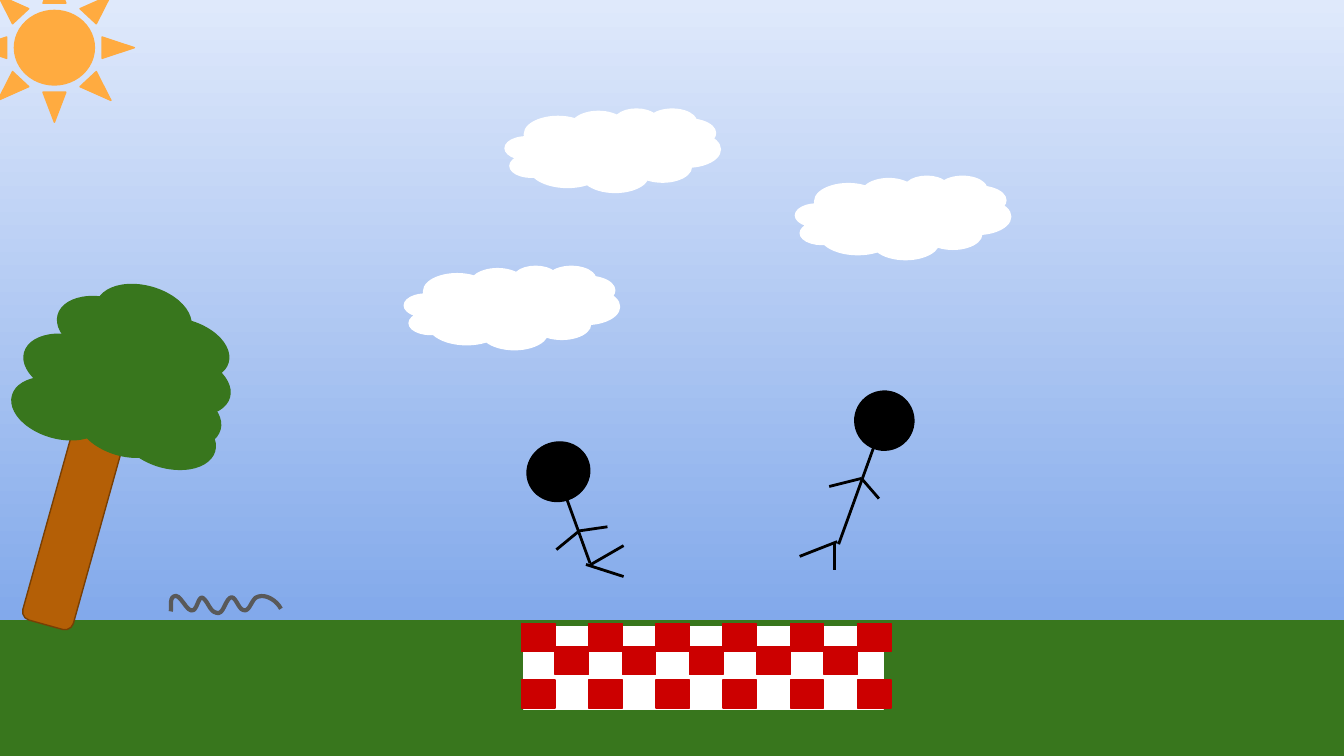
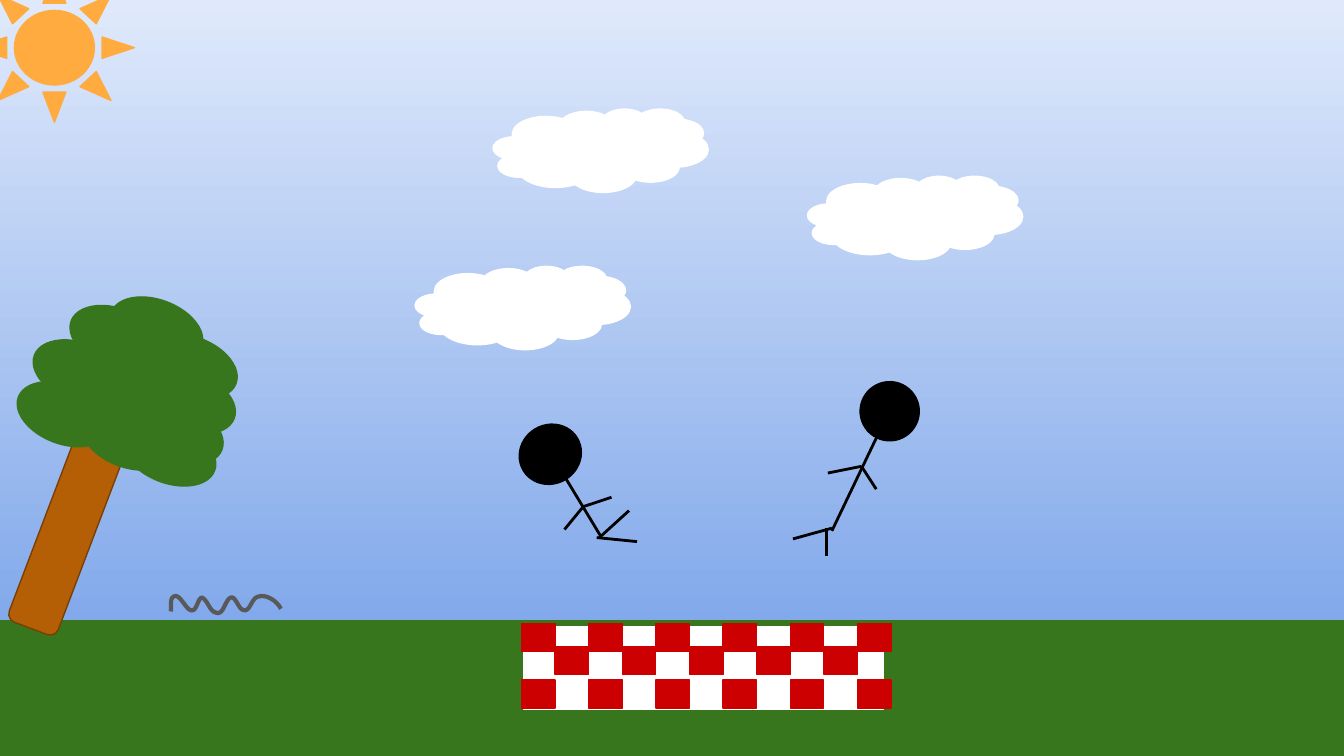
import math

import lxml.etree
import pptx
import pptx.dml.color
import pptx.enum.shapes
import pptx.oxml.ns
import pptx.util

KIND = pptx.enum.shapes.MSO_SHAPE
INK = {
    "dawn": "DFE9FB", "dusk": "6E9BE7", "green": "38761D", "wood": "B45F06",
    "bark": "783F04", "white": "FFFFFF", "red": "CC0000", "black": "000000",
    "sun": "FFAB40", "smoke": "595959",
}
SIZE = (10, 5.625)
GROUND = (0, 4.62, 10, 1)
CLOTH = (3.9, 4.66, 2.67, 0.62)
SUN = (-0.19, -0.2, 1.19, 1.11)

CHECK = {"left": 3.88, "step": 0.25, "high": 0.21, "count": 11}
ROWS = ((4.64, 5.06), (4.81,))

TRUNK = (0.39, 1.67)
ROOT = (0.565, 3.845)
LEAF = (0.72, 0.44)
LEAVES = [
    (0.08, 2.82), (0.57, 2.95), (0.41, 2.56), (0.82, 2.68), (0.17, 2.5), (0.93, 2.88),
    (1, 2.64), (0.62, 2.45), (0.99, 2.38), (0.42, 2.22), (0.89, 3.04), (0.71, 2.13),
]
LEAN = 15.6

CLOUD = (1.6, 0.62)
TOPS = (0.81, 1.31, 1.98)

START = (1.27, 4.55)
CURVES = [
    ((1.28, 4.52), (1.26, 4.46), (1.29, 4.44)),
    ((1.34, 4.4), (1.39, 4.57), (1.44, 4.54)),
    ((1.47, 4.52), (1.48, 4.43), (1.51, 4.45)),
    ((1.55, 4.48), (1.56, 4.55), (1.61, 4.56)),
    ((1.66, 4.58), (1.67, 4.48), (1.71, 4.45)),
    ((1.75, 4.42), (1.77, 4.53), (1.81, 4.54)),
    ((1.86, 4.56), (1.87, 4.45), (1.92, 4.44)),
    ((1.98, 4.42), (2.06, 4.47), (2.09, 4.53)),
]

SCENES = [
    {
        "root": ROOT, "lean": LEAN, "clouds": (3.76, 5.92, 3.01),
        "folk": [
            {"head": (6.36, 2.91, 0.44, 0.44), "tilt": 20.6, "flip": False, "limbs": [
                (6.5, 3.33, 6.24, 4.05), (6.23, 4.03, 5.95, 4.14), (6.21, 4.03, 6.21, 4.24),
                (6.54, 3.71, 6.41, 3.56), (6.41, 3.56, 6.17, 3.62)]},
            {"head": (3.92, 3.29, 0.47, 0.44), "tilt": 341.5, "flip": True, "limbs": [
                (4.22, 3.72, 4.39, 4.19), (4.14, 4.09, 4.31, 3.95), (4.31, 3.95, 4.52, 3.92),
                (4.36, 4.2, 4.64, 4.29), (4.38, 4.21, 4.64, 4.06)]},
        ],
    },
    {
        "root": (0.525, 3.895), "lean": 20.8, "clouds": (3.67, 6.01, 3.09),
        "folk": [
            {"head": (6.4, 2.84, 0.44, 0.44), "tilt": 25.9, "flip": False, "limbs": [
                (6.52, 3.26, 6.19, 3.95), (6.19, 3.93, 5.9, 4.01), (6.15, 3.93, 6.15, 4.14),
                (6.52, 3.64, 6.41, 3.47), (6.41, 3.47, 6.16, 3.52)]},
            {"head": (3.86, 3.16, 0.47, 0.44), "tilt": 329.2, "flip": True, "limbs": [
                (4.21, 3.56, 4.47, 3.99), (4.2, 3.94, 4.34, 3.77), (4.34, 3.77, 4.55, 3.7),
                (4.44, 4, 4.74, 4.03), (4.46, 4, 4.68, 3.8)]},
        ],
    },
]


def span(inch):
    return pptx.util.Cm(inch * 2.54)


def tint(name):
    return pptx.dml.color.RGBColor.from_string(INK[name])


def apply(item, form):
    for name, value in form.items():
        setattr(item, name, value)


def stroke(line, ink, width):
    line.color.rgb = tint(ink)
    apply(line, {"width": pptx.util.Pt(width)})


def block(slide, kind, box, ink, edge=None, **form):
    shape = slide.shapes.add_shape(kind, *map(span, box))
    shape.shadow.inherit = False
    shape.fill.solid()
    shape.fill.fore_color.rgb = tint(ink)
    stroke(shape.line, edge or ink, 0.75)
    apply(shape, form)
    return shape


def sky(slide):
    fill = slide.background.fill
    fill.gradient()
    fill.gradient_angle = 270
    for stop, ink, place in zip(fill.gradient_stops, ("dawn", "dusk"), (0, 1)):
        stop.color.rgb = tint(ink)
        stop.position = place


def tree(slide, root, lean):
    def around(mid, size):
        return (mid[0] - size[0] / 2, mid[1] - size[1] / 2, *size)

    block(slide, KIND.ROUNDED_RECTANGLE, around(root, TRUNK), "wood", "bark", rotation=lean)
    turn = math.radians(lean - LEAN)
    for left, top in LEAVES:
        x = left + LEAF[0] / 2 - ROOT[0]
        y = top + LEAF[1] / 2 - ROOT[1]
        mid = (root[0] + x * math.cos(turn) - y * math.sin(turn),
               root[1] + x * math.sin(turn) + y * math.cos(turn))
        block(slide, KIND.OVAL, around(mid, LEAF), "green", rotation=lean)


def picnic(slide):
    block(slide, KIND.RECTANGLE, CLOTH, "white")
    for col in range(CHECK["count"]):
        for top in ROWS[col % 2]:
            left = CHECK["left"] + col * CHECK["step"]
            block(slide, KIND.RECTANGLE, (left, top, CHECK["step"], CHECK["high"]), "red")


def person(slide, head, tilt, flip, limbs):
    face = block(slide, KIND.SMILEY_FACE, head, "black", rotation=tilt)
    if flip:
        face._element.spPr.xfrm.set("flipH", "1")
    for limb in limbs:
        line = slide.shapes.add_connector(
            pptx.enum.shapes.MSO_CONNECTOR.STRAIGHT, *map(span, limb))
        stroke(line.line, "black", 1.5)
        lxml.etree.SubElement(line._element.spPr, pptx.oxml.ns.qn("a:effectLst"))


def curl(slide, steps=8):
    dots = []
    first = START
    for curve in CURVES:
        ends = (first, *curve)
        for step in range(1, steps + 1):
            t = step / steps
            parts = [math.comb(3, k) * t ** k * (1 - t) ** (3 - k) for k in range(4)]
            dots.append(tuple(
                span(sum(p * end[axis] for p, end in zip(parts, ends))) for axis in (0, 1)))
        first = curve[-1]
    pen = slide.shapes.build_freeform(*map(span, START))
    pen.add_line_segments(dots, close=False)
    shape = pen.convert_to_shape()
    shape.shadow.inherit = False
    shape.fill.background()
    stroke(shape.line, "smoke", 2.25)


def draw(slide, scene):
    sky(slide)
    block(slide, KIND.RECTANGLE, GROUND, "green")
    tree(slide, scene["root"], scene["lean"])
    picnic(slide)
    for one in scene["folk"]:
        person(slide, **one)
    for left, top in zip(scene["clouds"], TOPS):
        block(slide, KIND.CLOUD, (left, top, *CLOUD), "white")
    block(slide, KIND.SUN, SUN, "sun")
    curl(slide)


def main():
    deck = pptx.Presentation()
    apply(deck, dict(zip(("slide_width", "slide_height"), map(span, SIZE))))
    for scene in SCENES:
        draw(deck.slides.add_slide(deck.slide_layouts[6]), scene)
    deck.save("out.pptx")


if __name__ == "__main__":
    main()
